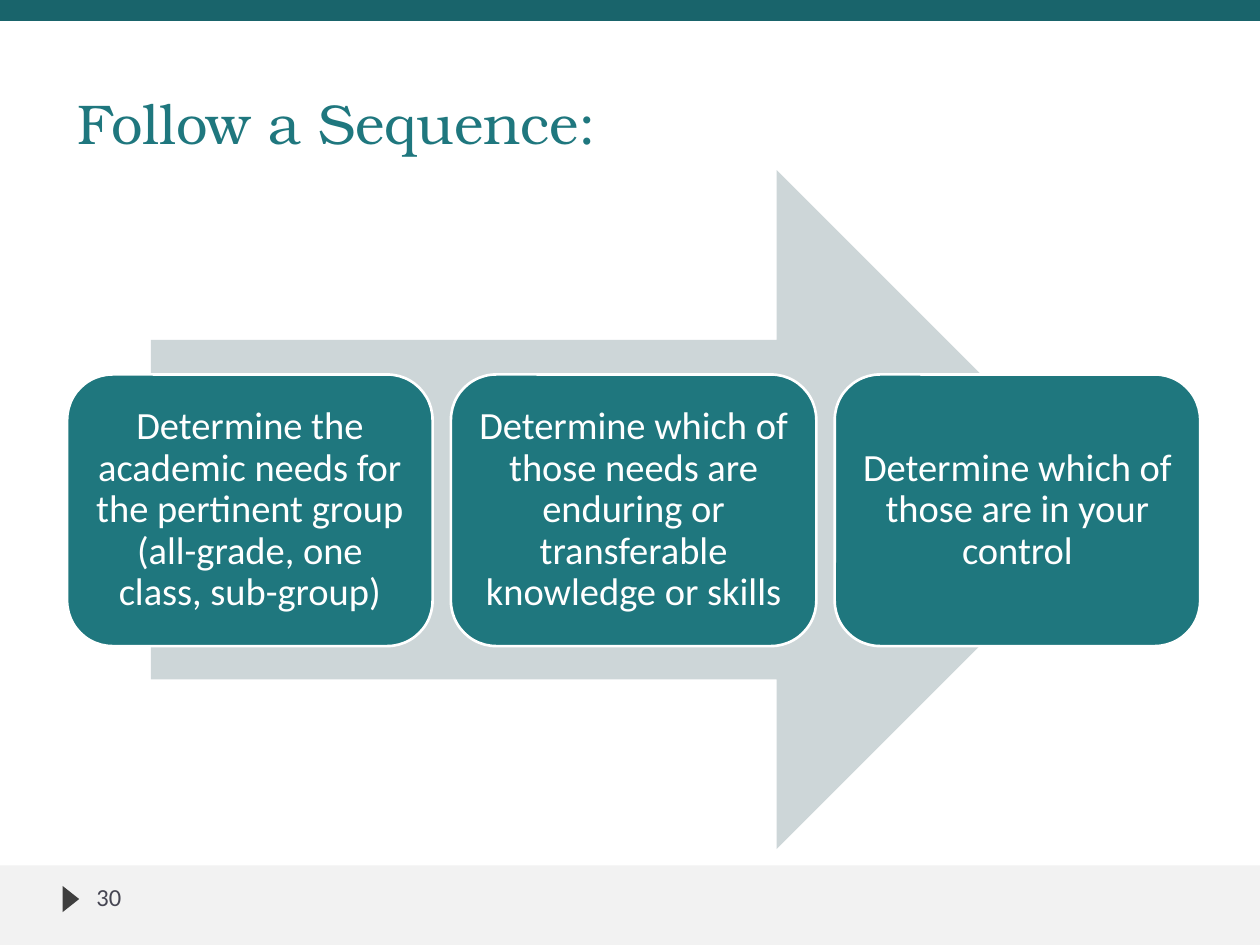
import pptx
import pptx.dml.color
import pptx.enum.shapes
import pptx.enum.text
import pptx.util

Pt = pptx.util.Pt
RGBColor = pptx.dml.color.RGBColor
SHAPE = pptx.enum.shapes.MSO_SHAPE
ANCHOR = pptx.enum.text.MSO_ANCHOR
ALIGN = pptx.enum.text.PP_ALIGN

TEAL = RGBColor(0x1F, 0x77, 0x7E)
DARK_TEAL = RGBColor(0x19, 0x64, 0x6B)
PALE_TEAL = RGBColor(0xCD, 0xD6, 0xD8)
LIGHT_GRAY = RGBColor(0xF2, 0xF2, 0xF2)
DARK_GRAY = RGBColor(0x3F, 0x3F, 0x3F)
SLATE = RGBColor(0x46, 0x46, 0x53)
WHITE = RGBColor(0xFF, 0xFF, 0xFF)

BODY_FONT = "Calibri"
TITLE_FONT = "TeX Gyre Bonum"

SLIDE_WIDTH, SLIDE_HEIGHT = 720, 540
FOOTER_TOP = 494.5
CARD_LEFT, CARD_TOP, CARD_WIDTH, CARD_HEIGHT = 38.4, 214, 208.8, 155.2
CARD_STEP = 219.3
CARD_INSET = 6.5

STEPS = [
    "Determine the academic needs for the pertinent group "
    "(all-grade, one class, sub-group)",
    "Determine which of those needs are enduring or transferable "
    "knowledge or skills",
    "Determine which of those are in your control",
]


def add_filled_shape(slide, kind, left, top, width, height, color):
    shape = slide.shapes.add_shape(kind, Pt(left), Pt(top), Pt(width), Pt(height))
    shape.shadow.inherit = False
    shape.fill.solid()
    shape.fill.fore_color.rgb = color
    shape.line.fill.background()
    return shape


def write_text(shape, text, font_name, size, color):
    """Fill the shape with one wrapped paragraph and return that paragraph."""
    shape.text_frame.word_wrap = True
    paragraph = shape.text_frame.paragraphs[0]
    paragraph.text = text
    paragraph.font.name = font_name
    paragraph.font.size = Pt(size)
    paragraph.font.color.rgb = color
    return paragraph


def add_label(slide, left, top, width, height, text, font_name, size, color,
              anchor=ANCHOR.TOP):
    box = slide.shapes.add_textbox(Pt(left), Pt(top), Pt(width), Pt(height))
    write_text(box, text, font_name, size, color)
    box.text_frame.vertical_anchor = anchor


def add_step_card(slide, left, text):
    card = add_filled_shape(slide, SHAPE.ROUNDED_RECTANGLE, left, CARD_TOP,
                            CARD_WIDTH, CARD_HEIGHT, TEAL)
    card.line.color.rgb = WHITE
    card.line.width = Pt(1.5)
    paragraph = write_text(card, text, BODY_FONT, 22, WHITE)
    paragraph.alignment = ALIGN.CENTER
    paragraph.line_spacing = 0.9
    frame = card.text_frame
    frame.vertical_anchor = ANCHOR.MIDDLE
    frame.margin_left = frame.margin_right = Pt(CARD_INSET)
    frame.margin_top = frame.margin_bottom = Pt(CARD_INSET)


def add_bands(slide):
    add_filled_shape(slide, SHAPE.RECTANGLE, 0, FOOTER_TOP, SLIDE_WIDTH,
                     SLIDE_HEIGHT - FOOTER_TOP, LIGHT_GRAY)
    add_filled_shape(slide, SHAPE.RECTANGLE, 0, 0, SLIDE_WIDTH, 12, DARK_TEAL)


def add_page_number(slide, number):
    marker = add_filled_shape(slide, SHAPE.ISOSCELES_TRIANGLE, 33, 509, 15, 9.5,
                              DARK_GRAY)
    marker.rotation = 90
    add_label(slide, 48, 500.4, 156, 28.8, number, BODY_FONT, 14, SLATE)


def main():
    presentation = pptx.Presentation()
    presentation.slide_width = Pt(SLIDE_WIDTH)
    presentation.slide_height = Pt(SLIDE_HEIGHT)
    slide = presentation.slides.add_slide(presentation.slide_layouts[6])

    add_bands(slide)
    add_filled_shape(slide, SHAPE.RIGHT_ARROW, 86.2, 97.2, 551.6, 388, PALE_TEAL)
    for index, text in enumerate(STEPS):
        add_step_card(slide, CARD_LEFT + index * CARD_STEP, text)
    add_page_number(slide, "30")
    add_label(slide, 37.4, 12.2, 649.4, 80.6, "Follow a Sequence:", TITLE_FONT, 32,
              TEAL, ANCHOR.BOTTOM)

    presentation.save("out.pptx")


if __name__ == "__main__":
    main()
